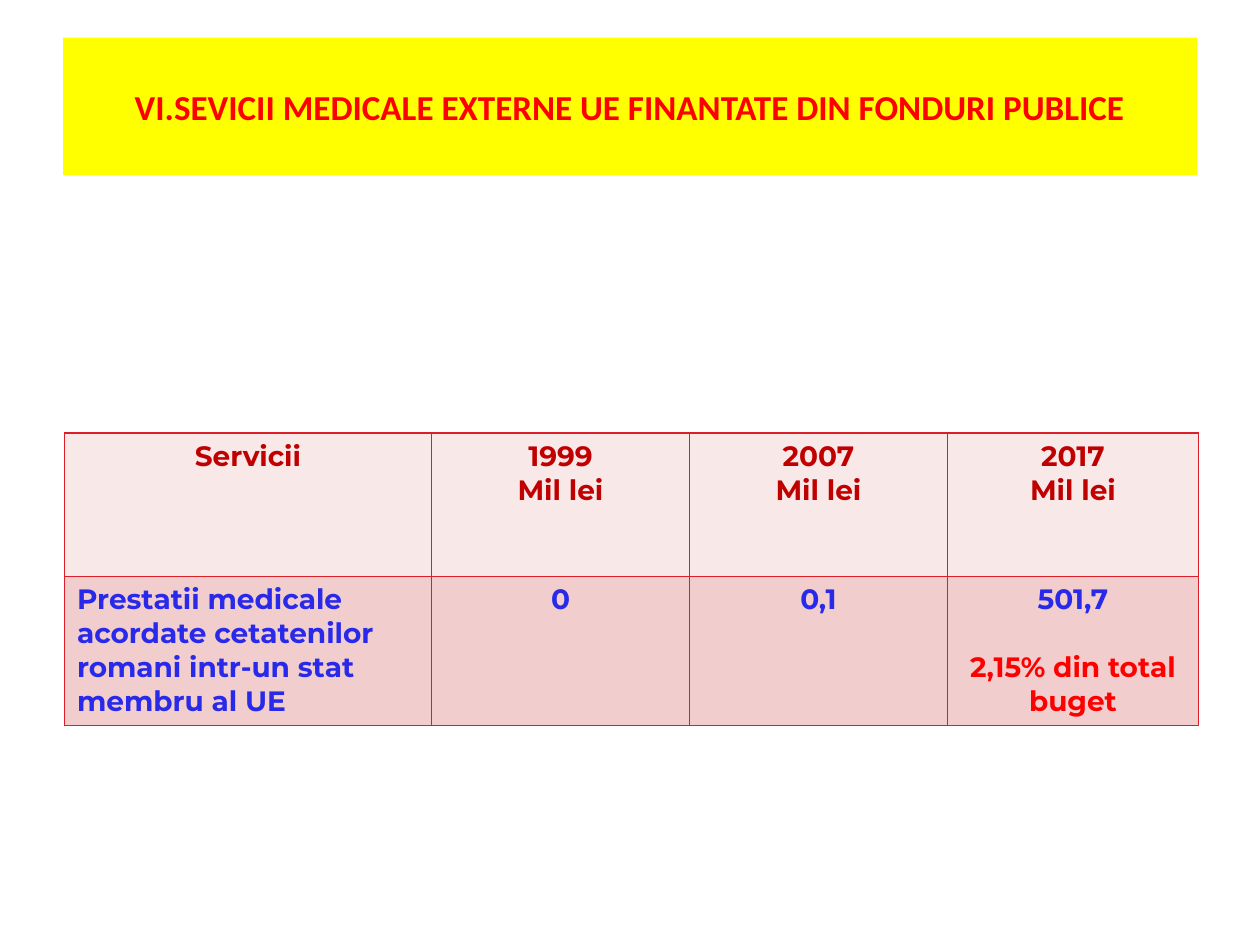
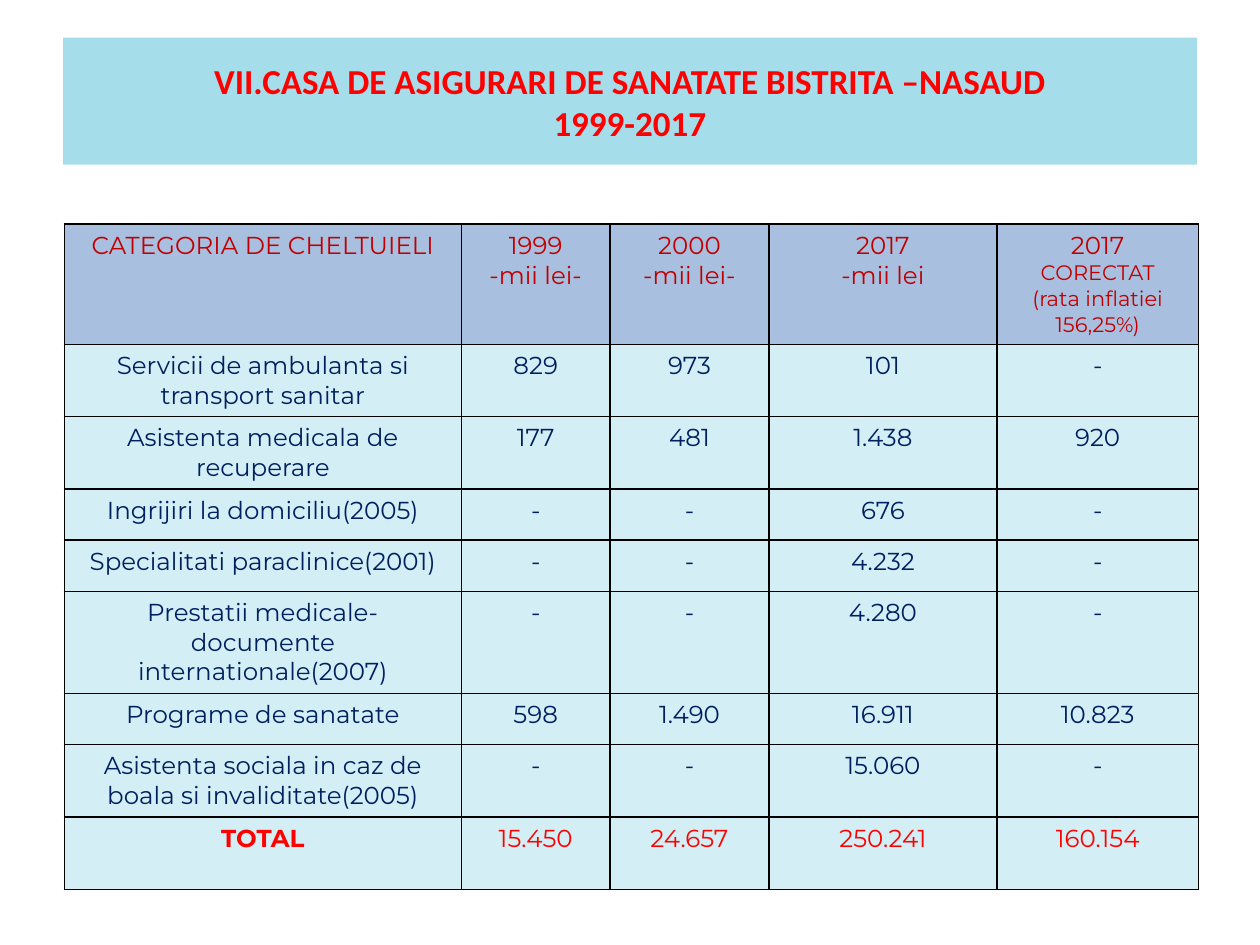
from lxml import etree
from pptx import Presentation
from pptx.dml.color import RGBColor
from pptx.enum import text
from pptx.oxml import ns
from pptx.util import Cm, Pt

TITLE_FONT, TABLE_FONT = "Calibri", "Montserrat"
RED, DARK_RED, BLUE, NAVY = "FF0000", "C00000", "2929E9", "002060"
LEFT, TOP, WIDTH = 1.27, 0.76, 22.86
TABLE_LEFT = 1.3
CENTER, START = text.PP_ALIGN.CENTER, text.PP_ALIGN.LEFT


def colour(value):
    return RGBColor.from_string(value)


def format_para(para, font, size, hex_colour, bold=False, align=CENTER):
    para.alignment = align
    for span in para.runs:
        span.font.name = font
        span.font.size = Pt(size)
        span.font.bold = bold
        span.font.color.rgb = colour(hex_colour)


def add_titled_page(deck, title, band_fill, height):
    page = deck.slides.add_slide(deck.slide_layouts[5])
    band = page.shapes.title
    band.left, band.top, band.width, band.height = map(Cm, (LEFT, TOP, WIDTH, height))
    band.fill.solid()
    band.fill.fore_color.rgb = colour(band_fill)
    frame = band.text_frame
    frame.text = title
    frame.word_wrap = True
    frame.auto_size = text.MSO_AUTO_SIZE.NONE
    frame.vertical_anchor = text.MSO_ANCHOR.MIDDLE
    for para in frame.paragraphs:
        format_para(para, TITLE_FONT, 20, RED, bold=True)
    return page


def add_borders(cell, hex_colour):
    """Draw a 1 pt line on every side; the lines must precede the fill."""
    properties = cell._tc.get_or_add_tcPr()
    for index, side in enumerate(("lnL", "lnR", "lnT", "lnB")):
        line = etree.Element(ns.qn(f"a:{side}"), w=str(Pt(1)))
        fill = etree.SubElement(line, ns.qn("a:solidFill"))
        etree.SubElement(fill, ns.qn("a:srgbClr"), val=hex_colour)
        properties.insert(index, line)


def add_grid(page, top, widths, heights, rows, fills, border, size, colours, bold=False):
    """Place a table; fills and colours are pairs for the header and the body."""
    box = map(Cm, (TABLE_LEFT, top, sum(widths), sum(heights)))
    table = page.shapes.add_table(len(rows), len(widths), *box).table
    table.first_row = table.horz_banding = False
    for column, width in zip(table.columns, widths):
        column.width = Cm(width)
    for r, (values, height) in enumerate(zip(rows, heights)):
        part = 0 if r == 0 else 1
        table.rows[r].height = Cm(height)
        for c, value in enumerate(values):
            cell = table.cell(r, c)
            cell.fill.solid()
            cell.fill.fore_color.rgb = colour(fills[part])
            add_borders(cell, border)
            cell.text_frame.text = value
            for para in cell.text_frame.paragraphs:
                format_para(para, TABLE_FONT, size, colours[part], bold)
    return table


def add_external_services(deck):
    page = add_titled_page(
        deck, "VI.SEVICII MEDICALE EXTERNE UE FINANTATE DIN FONDURI PUBLICE", "FFFF00", 2.77)
    rows = [
        ["Servicii"] + [f"{year}\nMil lei" for year in (1999, 2007, 2017)],
        ["Prestatii medicale acordate cetatenilor romani intr-un stat membru al UE",
         "0", "0,1", "501,7\n2,15% din total buget"],
    ]
    table = add_grid(page, 8.73, [7.4, 5.2, 5.2, 5.06], [2.89, 3], rows,
                     ("F8E8E8", "F1CDCD"), "DA1F28", 16, (DARK_RED, BLUE), bold=True)
    table.cell(1, 0).text_frame.paragraphs[0].alignment = START
    share = table.cell(1, 3).text_frame.paragraphs[1]
    share.space_before = Pt(19.5)
    format_para(share, TABLE_FONT, 16, RED, bold=True)


def add_county_spending(deck):
    page = add_titled_page(
        deck, "VII.CASA DE ASIGURARI DE SANATATE BISTRITA –NASAUD\v1999-2017", "A6DDEA", 2.56)
    rows = [
        ["CATEGORIA DE CHELTUIELI", "1999\n-mii lei-", "2000\n-mii lei-", "2017\n-mii lei",
         "2017\nCORECTAT\n(rata inflatiei 156,25%)"],
        ["Servicii de ambulanta si transport sanitar", "829", "973", "101", "-"],
        ["Asistenta medicala de recuperare", "177", "481", "1.438", "920"],
        ["Ingrijiri la domiciliu(2005)", "-", "-", "676", "-"],
        ["Specialitati paraclinice(2001)", "-", "-", "4.232", "-"],
        ["Prestatii medicale-documente internationale(2007)", "-", "-", "4.280", "-"],
        ["Programe de sanatate", "598", "1.490", "16.911", "10.823"],
        ["Asistenta sociala in caz de boala si invaliditate(2005)", "-", "-", "15.060", "-"],
        ["TOTAL", "15.450", "24.657", "250.241", "160.154"],
    ]
    single, double, triple = 1.03, 1.46, 2.06
    heights = [2.42, double, double, single, single, triple, single, double, double]
    table = add_grid(page, 4.52, [8, 3, 3.2, 4.6, 4.06], heights, rows,
                     ("A8BFDF", "D3EEF5"), "000000", 14, (DARK_RED, NAVY))
    for para in table.cell(0, 4).text_frame.paragraphs[1:]:
        format_para(para, TABLE_FONT, 12, DARK_RED)
    for c, cell in enumerate(table.rows[len(rows) - 1].cells):
        format_para(cell.text_frame.paragraphs[0], TABLE_FONT, 14, RED, bold=c == 0)


def main():
    deck = Presentation()
    deck.slide_width, deck.slide_height = Cm(25.4), Cm(19.05)
    add_external_services(deck)
    add_county_spending(deck)
    deck.save("out.pptx")


if __name__ == "__main__":
    main()
